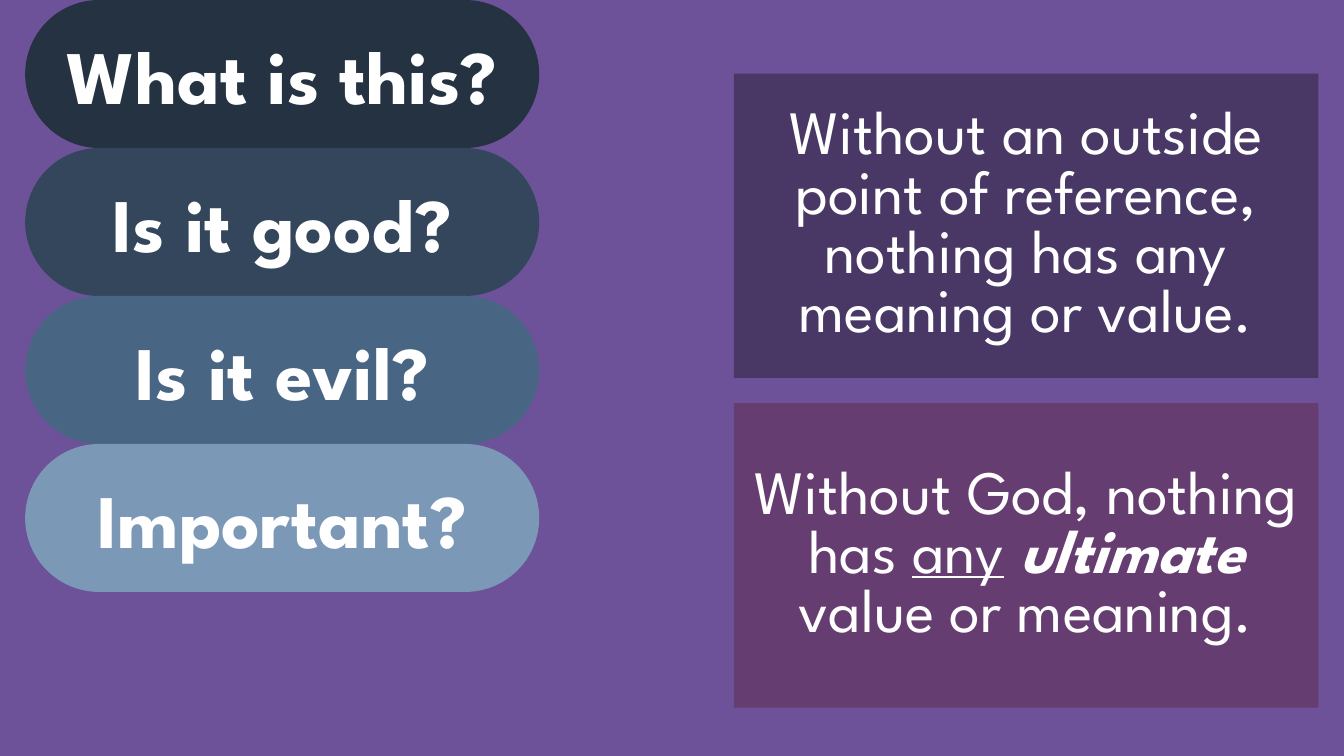
from pptx import Presentation
from pptx.dml.color import RGBColor
from pptx.enum.shapes import MSO_SHAPE
from pptx.enum.text import MSO_ANCHOR, PP_ALIGN
from pptx.util import Pt

FONT = "League Spartan"
WHITE = "FFFFFF"
QUESTIONS = [
    ("What is this?", "243241"),
    ("Is it good?", "33465B"),
    ("Is it evil?", "486583"),
    ("Important?", "7B98B6"),
]
STATEMENTS = [
    ([("Without an outside point of reference, nothing has any meaning or value.", {})],
     "493766"),
    ([("Without God, nothing has ", {}),
      ("any", {"underline": True}),
      (" ", {}),
      ("ultimate", {"bold": True, "italic": True}),
      (" value or meaning.", {})],
     "663D70"),
]


def paint(fill, color):
    fill.solid()
    fill.fore_color.rgb = RGBColor.from_string(color)


def add_span(para, text, size, bold=False, italic=False, underline=False, color=WHITE):
    span = para.add_run()
    span.text = text
    font = span.font
    font.name, font.size = FONT, Pt(size)
    font.bold, font.italic, font.underline = bold, italic, underline
    font.color.rgb = RGBColor.from_string(color)


def add_panel(page, kind, left, top, width, height, color):
    """Add a filled shape and return it with its centred paragraph."""
    panel = page.shapes.add_shape(kind, Pt(left), Pt(top), Pt(width), Pt(height))
    panel.shadow.inherit = False
    paint(panel.fill, color)
    panel.line.fill.background()
    frame = panel.text_frame
    frame.word_wrap = True
    frame.vertical_anchor = MSO_ANCHOR.MIDDLE
    para = frame.paragraphs[0]
    para.alignment = PP_ALIGN.CENTER
    return panel, para


def add_questions(page, left, top, width, height):
    """Stack the questions as touching pills that fill the box."""
    step = height / len(QUESTIONS)
    for index, (question, color) in enumerate(QUESTIONS):
        pill, para = add_panel(page, MSO_SHAPE.ROUNDED_RECTANGLE,
                               left, top + index * step, width, step, color)
        pill.adjustments[0] = 0.5
        add_span(para, question, 54, bold=True)


def add_statements(page, left, top, width, height, gap=18):
    """Stack the statements as equal rectangles with a gap between them."""
    count = len(STATEMENTS)
    panel_height = (height - gap * (count - 1)) / count
    for index, (spans, color) in enumerate(STATEMENTS):
        panel, para = add_panel(page, MSO_SHAPE.RECTANGLE, left,
                                top + index * (panel_height + gap),
                                width, panel_height, color)
        para.line_spacing = 0.8
        for text, style in spans:
            add_span(para, text, 44, **style)


def main():
    deck = Presentation()
    deck.slide_width, deck.slide_height = Pt(960), Pt(540)
    page = deck.slides.add_slide(deck.slide_layouts[6])
    paint(page.background.fill, "6E5299")

    # Questions on the left, statements on the right
    add_questions(page, 18, 0, 367.2, 422.8)
    add_statements(page, 524.2, 52.6, 417.6, 452.8)

    deck.save("out.pptx")


if __name__ == "__main__":
    main()
